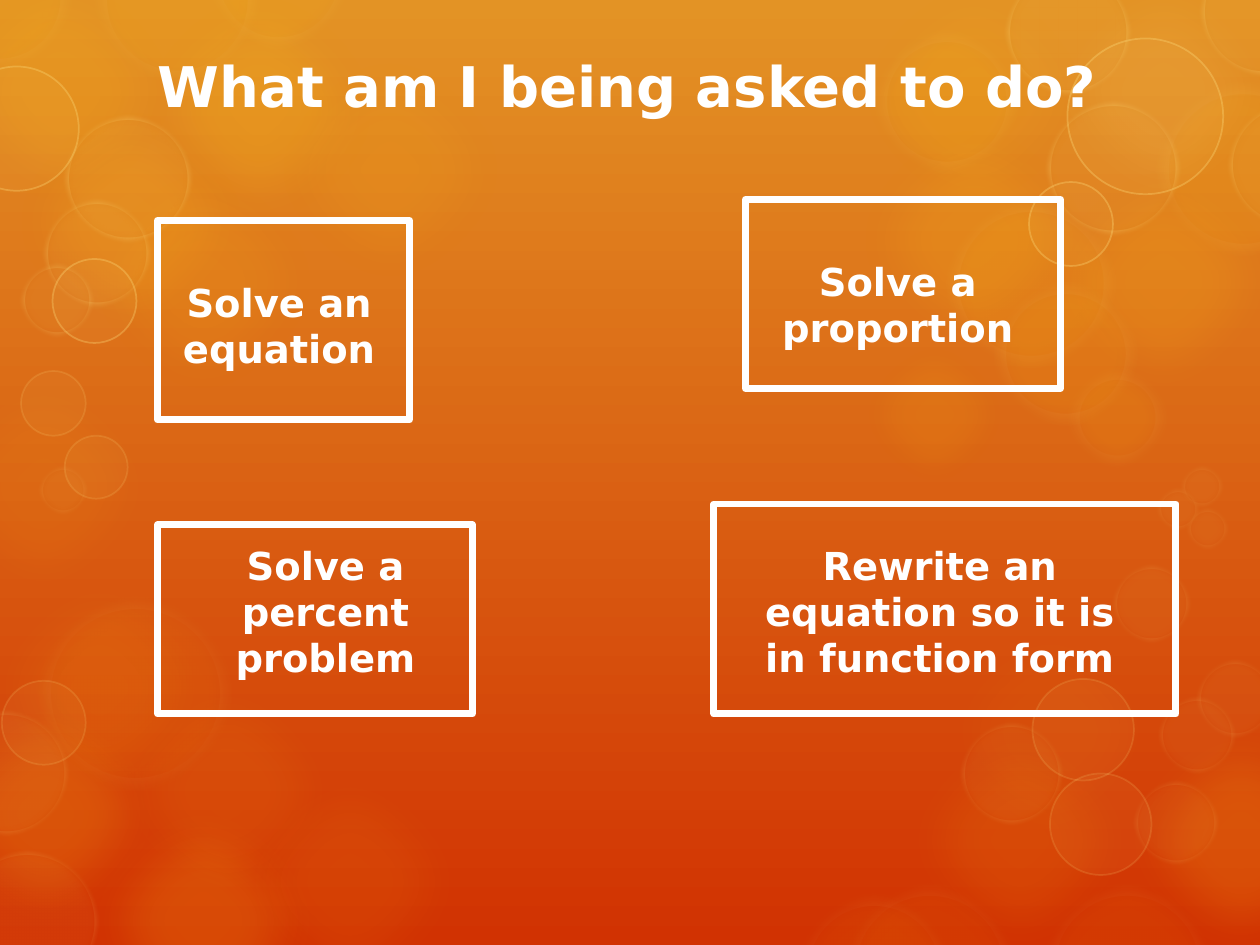
from lxml.etree import SubElement
from pptx import Presentation
from pptx.dml.color import RGBColor as Rgb
from pptx.enum.shapes import MSO_SHAPE as Kind
from pptx.enum.text import MSO_ANCHOR as Anchor, PP_ALIGN as Align
from pptx.oxml.ns import qn
from pptx.util import Pt

FONT = "DejaVu Sans"
WHITE, GOLD, PALE, CREAM = "FFFFFF", "FDC61B", "FFE281", "FEEBAE"

BLOBS = [
    (-18, 318, 150, 8), (41, 86, 150, 10), (148, 22, 150, 10),
    (41, 451, 150, 16), (-40, -23, 150, 14), (73, -13, 150, 20),
    (0, 52, 150, 15), (482, -21, 150, 10), (590, 86, 150, 15),
    (634, 405, 150, 16), (525, 343, 150, 5), (-49, 390, 150, 16),
    (55, 377, 150, 8), (482, 62, 150, 15), (508, 405, 150, 10),
    (125, 429, 150, 8), (-50, 203, 150, 8), (486, 189, 96, 10),
]
HAZE = [
    (661, 47, 99), (500, 17, 82), (541, 114, 96), (568, 161, 82),
    (610, 210, 57), (54, -47, 94), (118, -54, 82), (-41, -42, 82),
]
MIST = [(22, 341, 110), (455, 511, 89), (482, 505, 98), (596, 505, 96)]
SOFT_LOW = [
    (-25, 486, 81), (-32, 406, 71), (549, 413, 58), (648, 446, 48),
    (636, 323, 44), (662, 398, 44), (684, 377, 44), (675, 266, 24),
    (661, 279, 24), (678, 290, 24), (22, 266, 28),
]
SOFT_HIGH = [
    (37, 66, 72), (25, 114, 61), (12, 151, 41), (575, -17, 71),
    (686, -29, 72), (702, 59, 71), (598, 58, 76),
]
SHARP_LOW = [
    (1, 389, 48), (600, 442, 58), (590, 388, 58), (12, 212, 37), (37, 249, 36),
]
SHARP_HIGH = [(-26, 38, 71), (30, 148, 48), (610, 22, 89), (588, 104, 48)]
RINGS = [
    ([(590, -23, 150)], PALE, 10, None, 25),
    (HAZE, GOLD, 10, (CREAM, 14, 6), 10),
    (MIST, GOLD, 6, (CREAM, 14, 4), 10),
    (SOFT_LOW, PALE, 5, (PALE, 5, 15), 4),
    (SOFT_HIGH, PALE, 5, (PALE, 5, 30), 4),
    (SHARP_LOW, PALE, 5, (PALE, 1, 15), 0),
    (SHARP_HIGH, PALE, 5, (PALE, 1, 30), 0),
]
TASKS = [
    ("Solve a proportion", (438, 144, 150, 60)),
    ("Solve a percent problem", (90, 306, 192, 87)),
    ("Rewrite an equation so it is in function form", (426, 306, 222, 87)),
]
FRAMES = [
    (426, 114, 180, 108), (90, 126, 144, 114),
    (90, 300, 180, 108), (408, 288, 264, 120),
]


def tint(code):
    return Rgb.from_string(code)


class Deck:
    def __init__(self, wide, high):
        self.show = Presentation()
        self.show.slide_width, self.show.slide_height = Pt(wide), Pt(high)
        self.slide = self.show.slides.add_slide(self.show.slide_layouts[6])
        self.shapes = self.slide.shapes

    def ground(self, first, last):
        fill = self.slide.background.fill
        fill.gradient()
        fill.gradient_angle = 270
        for stop, code in zip(fill.gradient_stops, (first, last)):
            stop.color.rgb = tint(code)

    def disc(self, x, y, size, code, alpha, edge=None, blur=0):
        shape = self.shapes.add_shape(Kind.OVAL, *map(Pt, (x, y, size, size)))
        shape.shadow.inherit = False
        shape.fill.solid()
        shape.fill.fore_color.rgb = tint(code)
        alphas = [alpha]
        if edge:
            hue, width, fade = edge
            shape.line.color.rgb = tint(hue)
            shape.line.width = Pt(width)
            alphas.append(fade)
        else:
            shape.line.fill.background()
        props = shape.element.spPr
        for node, part in zip(list(props.iter(qn("a:srgbClr"))), alphas):
            SubElement(node, qn("a:alpha"), val=str(part * 1000))
        if blur:
            SubElement(props.find(qn("a:effectLst")), qn("a:softEdge"), rad=str(Pt(blur)))

    def text(self, words, box, size=22, anchor=Anchor.TOP, gaps=(0, 0)):
        frame = self.shapes.add_textbox(*map(Pt, box)).text_frame
        frame.word_wrap = True
        frame.vertical_anchor = anchor
        para = frame.paragraphs[0]
        para.text = words
        para.alignment = Align.CENTER
        para.space_before, para.space_after = map(Pt, gaps)
        font = para.font
        font.name, font.size, font.bold = FONT, Pt(size), True
        font.color.rgb = tint(WHITE)

    def frame(self, box):
        shape = self.shapes.add_shape(Kind.ACTION_BUTTON_CUSTOM, *map(Pt, box))
        shape.shadow.inherit = False
        shape.fill.background()
        shape.line.color.rgb = tint(WHITE)
        shape.line.width = Pt(4)


def main():
    deck = Deck(720, 540)
    deck.ground("E39325", "D13202")
    for x, y, size, alpha in BLOBS:
        deck.disc(x, y, size, GOLD, alpha, blur=size / 6)
    for spots, code, alpha, edge, blur in RINGS:
        for x, y, size in spots:
            deck.disc(x, y, size, code, alpha, edge, blur)
    deck.text("What am I being asked to do?", (78, 12, 561, 73), 32, Anchor.MIDDLE)
    deck.text("Solve an equation", (79, 143, 161, 86), anchor=Anchor.MIDDLE, gaps=(4.4, 6))
    for words, box in TASKS:
        deck.text(words, box)
    for box in FRAMES:
        deck.frame(box)
    deck.show.save("out.pptx")


if __name__ == "__main__":
    main()
